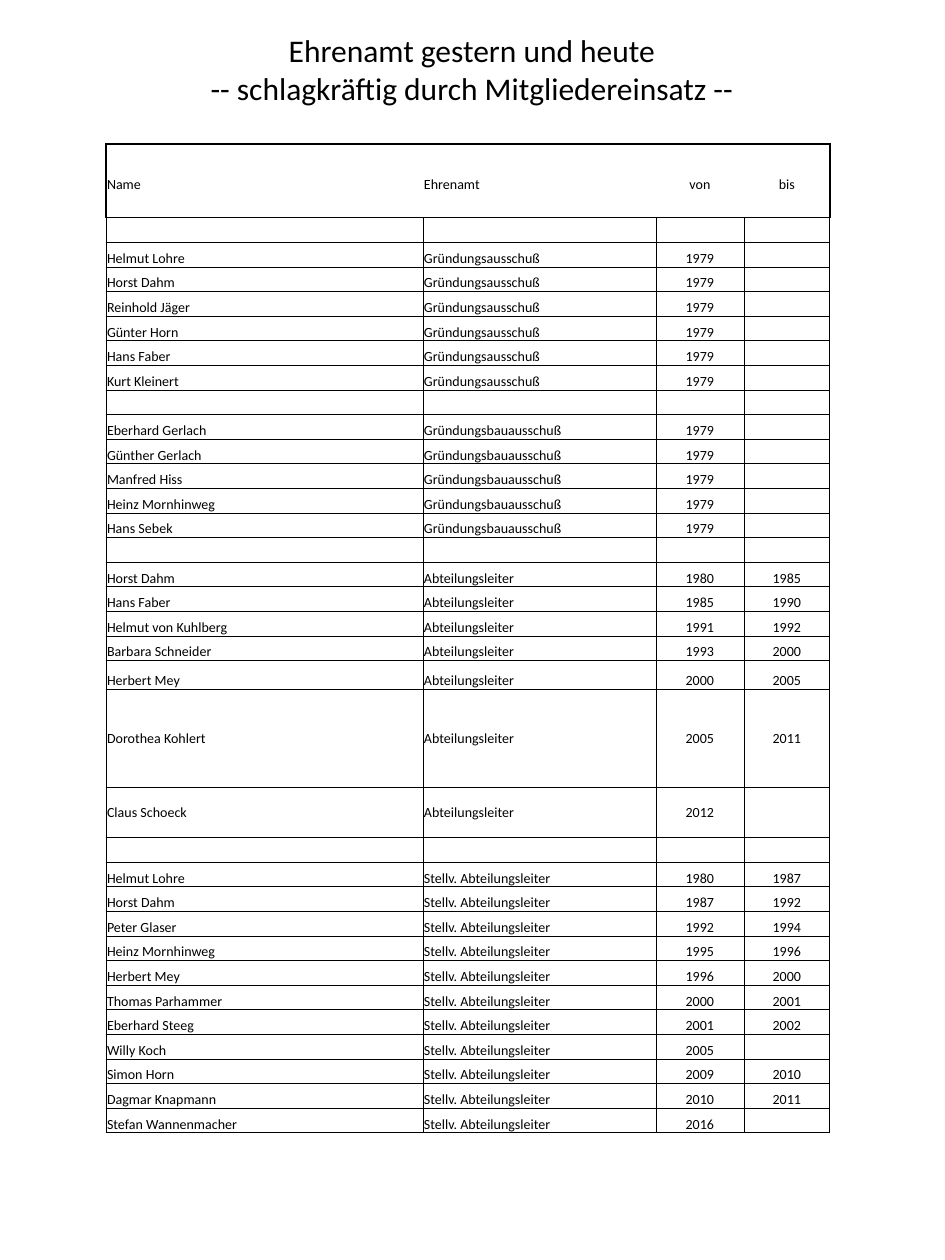
import pptx
import pptx.util
import pptx.dml.color
import pptx.enum.text
import pptx.oxml.ns
from lxml import etree

TITLE = ["Ehrenamt gestern und heute", "-- schlagkräftig durch Mitgliedereinsatz --"]
HEADINGS = ["Name", "Ehrenamt", "von", "bis"]
OFFICES = [
    ("Gründungsausschuß", [
        ("Helmut Lohre", "1979", ""),
        ("Horst Dahm", "1979", ""),
        ("Reinhold Jäger", "1979", ""),
        ("Günter Horn", "1979", ""),
        ("Hans Faber", "1979", ""),
        ("Kurt Kleinert", "1979", ""),
    ]),
    ("Gründungsbauausschuß", [
        ("Eberhard Gerlach", "1979", ""),
        ("Günther Gerlach", "1979", ""),
        ("Manfred Hiss", "1979", ""),
        ("Heinz Mornhinweg", "1979", ""),
        ("Hans Sebek", "1979", ""),
    ]),
    ("Abteilungsleiter", [
        ("Horst Dahm", "1980", "1985"),
        ("Hans Faber", "1985", "1990"),
        ("Helmut von Kuhlberg", "1991", "1992"),
        ("Barbara Schneider", "1993", "2000"),
        ("Herbert Mey", "2000", "2005"),
        ("Dorothea Kohlert", "2005", "2011"),
        ("Claus Schoeck", "2012", ""),
    ]),
    ("Stellv. Abteilungsleiter", [
        ("Helmut Lohre", "1980", "1987"),
        ("Horst Dahm", "1987", "1992"),
        ("Peter Glaser", "1992", "1994"),
        ("Heinz Mornhinweg", "1995", "1996"),
        ("Herbert Mey", "1996", "2000"),
        ("Thomas Parhammer", "2000", "2001"),
        ("Eberhard Steeg", "2001", "2002"),
        ("Willy Koch", "2005", ""),
        ("Simon Horn", "2009", "2010"),
        ("Dagmar Knapmann", "2010", "2011"),
        ("Stefan Wannenmacher", "2016", ""),
    ]),
]
COLORS = {"text": "000000", "line": "000000", "paper": "FFFFFF"}
FONT = "Calibri"
PX = 914400 / 126
TABLE_LEFT, TABLE_TOP, TABLE_HEIGHT = 106, 144, 990
COLUMN_WIDTHS = [317, 233, 88, 86]
TALL_ROWS = {21: 29, 22: 98, 23: 50}
MIDDLE_ROWS = (22, 23)
HEADER_ROWS = 3

ALIGN = pptx.enum.text.PP_ALIGN
ANCHOR = pptx.enum.text.MSO_ANCHOR
qn = pptx.oxml.ns.qn


def px(length):
    return pptx.util.Emu(round(length * PX))


def write(frame, lines, size, align=ALIGN.LEFT):
    for number, line in enumerate(lines):
        paragraph = frame.paragraphs[0] if number == 0 else frame.add_paragraph()
        paragraph.alignment = align
        if not line:
            etree.SubElement(paragraph._p, qn("a:endParaRPr"), sz=str(size * 100))
            continue
        run = paragraph.add_run()
        run.text = line
        run.font.name = FONT
        run.font.size = pptx.util.Pt(size)
        run.font.color.rgb = pptx.dml.color.RGBColor.from_string(COLORS["text"])


def set_border(cell, side, points):
    line = etree.SubElement(cell._tc.get_or_add_tcPr(), qn(f"a:ln{side}"),
                            w=str(pptx.util.Pt(points)))
    if points:
        fill = etree.SubElement(line, qn("a:solidFill"))
        etree.SubElement(fill, qn("a:srgbClr"), val=COLORS["line"])
    else:
        etree.SubElement(line, qn("a:noFill"))


def border_widths(row, column):
    if row >= HEADER_ROWS:
        return {"L": 0.5, "R": 0.5, "T": 0.5, "B": 0.5}
    return {
        "L": 1 if column == 0 else 0,
        "R": 1 if column == len(HEADINGS) - 1 else 0,
        "T": 1 if row == 0 else 0,
        "B": 0.5 if row == HEADER_ROWS - 1 else 0,
    }


def main():
    presentation = pptx.Presentation()
    presentation.slide_width, presentation.slide_height = px(945), px(1260)
    slide = presentation.slides.add_slide(presentation.slide_layouts[5])
    slide.background.fill.solid()
    slide.background.fill.fore_color.rgb = pptx.dml.color.RGBColor.from_string(COLORS["paper"])

    title = slide.shapes.title
    title.left, title.top, title.width, title.height = map(px, (189, 24, 566, 89))
    title.text_frame.word_wrap = False
    title.text_frame.auto_size = pptx.enum.text.MSO_AUTO_SIZE.SHAPE_TO_FIT_TEXT
    title.text_frame.vertical_anchor = ANCHOR.MIDDLE
    write(title.text_frame, TITLE, size=18, align=ALIGN.CENTER)

    blank = [""] * len(HEADINGS)
    rows = [blank, HEADINGS, blank]
    for office, holders in OFFICES:
        rows.append(blank)
        rows += [[name, office, start, end] for name, start, end in holders]

    honours = slide.shapes.add_table(
        len(rows), len(HEADINGS), px(TABLE_LEFT), px(TABLE_TOP),
        px(sum(COLUMN_WIDTHS)), px(TABLE_HEIGHT)).table
    honours.first_row = honours.horz_banding = False
    for column, width in zip(honours.columns, COLUMN_WIDTHS):
        column.width = px(width)
    row_height = (TABLE_HEIGHT - sum(TALL_ROWS.values())) / (len(rows) - len(TALL_ROWS))

    for row, values in enumerate(rows):
        honours.rows[row].height = px(TALL_ROWS.get(row, row_height))
        for column, value in enumerate(values):
            cell = honours.cell(row, column)
            cell.margin_left = cell.margin_right = cell.margin_top = px(1)
            cell.margin_bottom = 0
            cell.vertical_anchor = ANCHOR.MIDDLE if row in MIDDLE_ROWS else ANCHOR.BOTTOM
            for side, points in border_widths(row, column).items():
                set_border(cell, side, points)
            cell.fill.background()
            write(cell.text_frame, [value], size=8,
                  align=ALIGN.CENTER if column >= 2 else ALIGN.LEFT)

    presentation.save("out.pptx")


if __name__ == "__main__":
    main()
